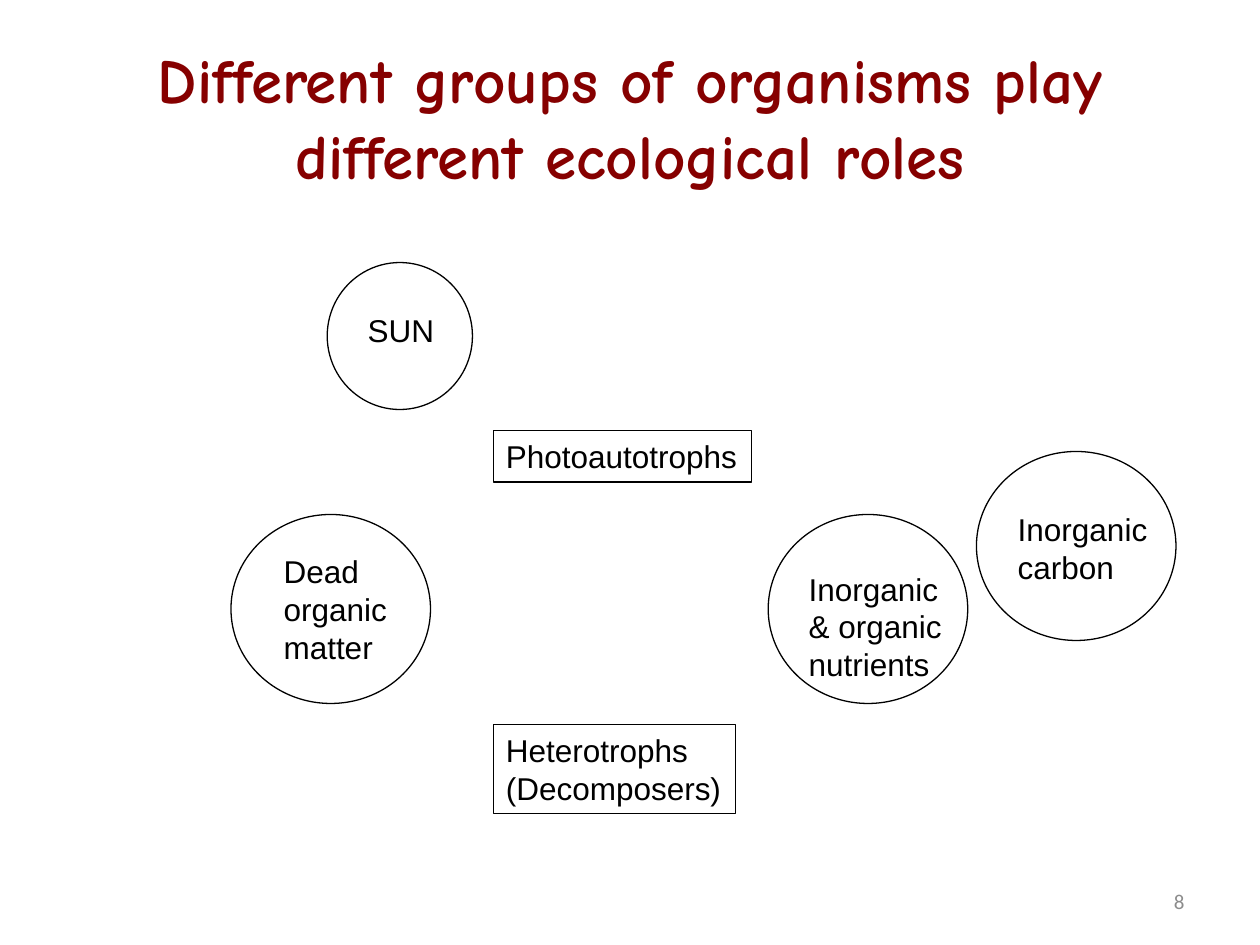
from dataclasses import dataclass

from pptx import Presentation
from pptx.dml.color import RGBColor as Rgb
from pptx.enum.shapes import MSO_SHAPE as Kind
from pptx.enum.text import MSO_ANCHOR as Anchor, MSO_AUTO_SIZE as Fit, PP_ALIGN as Align
from pptx.util import Pt


@dataclass(frozen=True)
class Theme:
    """Colours, fonts and type sizes of the slide."""
    ink: Rgb = Rgb(0, 0, 0)
    red: Rgb = Rgb(0x86, 0, 0)
    grey: Rgb = Rgb(0x8C, 0x8C, 0x8C)
    head: str = "Comic Neue"
    body: str = "Arial"
    foot: str = "Calibri"
    big: int = 36
    mid: int = 18
    small: int = 12
    line: float = 0.75


LOOK = Theme()
LABEL = dict(name=LOOK.body, size=Pt(LOOK.mid), color=LOOK.ink)


def write(shape, text, style, align=Align.LEFT, anchor=Anchor.TOP, wrap=True):
    """Put formatted text into a shape, one paragraph per line."""
    frame = shape.text_frame
    frame.text = text
    for key, val in dict(auto_size=Fit.NONE, word_wrap=wrap, vertical_anchor=anchor).items():
        setattr(frame, key, val)
    for para in frame.paragraphs:
        para.alignment = align
        for key, val in style.items():
            if key == "color":
                para.font.color.rgb = val
            else:
                setattr(para.font, key, val)


def title(slide, text, box):
    """Place and format the title."""
    shape = slide.shapes.title
    for key, val in zip(("left", "top", "width", "height"), box):
        setattr(shape, key, Pt(val))
    style = dict(name=LOOK.head, size=Pt(LOOK.big), bold=True, color=LOOK.red)
    write(shape, text, style, Align.CENTER, Anchor.MIDDLE)


def label(slide, text, box, style=LABEL, **opts):
    """Add a text box."""
    write(slide.shapes.add_textbox(*map(Pt, box)), text, style, **opts)


def outline(slide, kind, box):
    """Add an unfilled shape with a thin line."""
    shape = slide.shapes.add_shape(kind, *map(Pt, box))
    shape.shadow.inherit = False
    shape.fill.background()
    shape.line.color.rgb = LOOK.ink
    shape.line.width = Pt(LOOK.line)
    return shape


def group(slide, text, box):
    """Add a boxed group of organisms."""
    write(outline(slide, Kind.RECTANGLE, box), text, LABEL, wrap=False)


def pool(slide, text, ring, box):
    """Add a circled source or store with its label."""
    outline(slide, Kind.OVAL, ring)
    label(slide, text, box)


def main():
    """Build the slide and save it."""
    deck = Presentation()
    deck.slide_width, deck.slide_height = Pt(720), Pt(540)
    slide = deck.slides.add_slide(deck.slide_layouts[5])
    title(slide, "Different groups of organisms play different ecological roles",
          (36, 21.6, 648, 90))
    group(slide, "Photoautotrophs", (282, 246, 147.5, 29.5))
    group(slide, "Heterotrophs\n(Decomposers)", (282, 414, 138.5, 51))
    wide, high = 114, 108
    pool(slide, "SUN", (187, 150, 83, 84), (203, 174, 91.5, 29))
    pool(slide, "Dead organic matter", (132, 294, wide, high), (155, 312, 97, 72))
    pool(slide, "Inorganic & organic nutrients", (439, 294, wide, high), (455, 322, 97, 72))
    pool(slide, "Inorganic carbon", (558, 258, wide, high), (574.5, 288, 91.5, 50.5))
    style = dict(name=LOOK.foot, size=Pt(LOOK.small), color=LOOK.grey)
    label(slide, "8", (516, 500.5, 168, 28.75), style, align=Align.RIGHT, anchor=Anchor.MIDDLE)
    deck.save("out.pptx")


if __name__ == "__main__":
    main()
